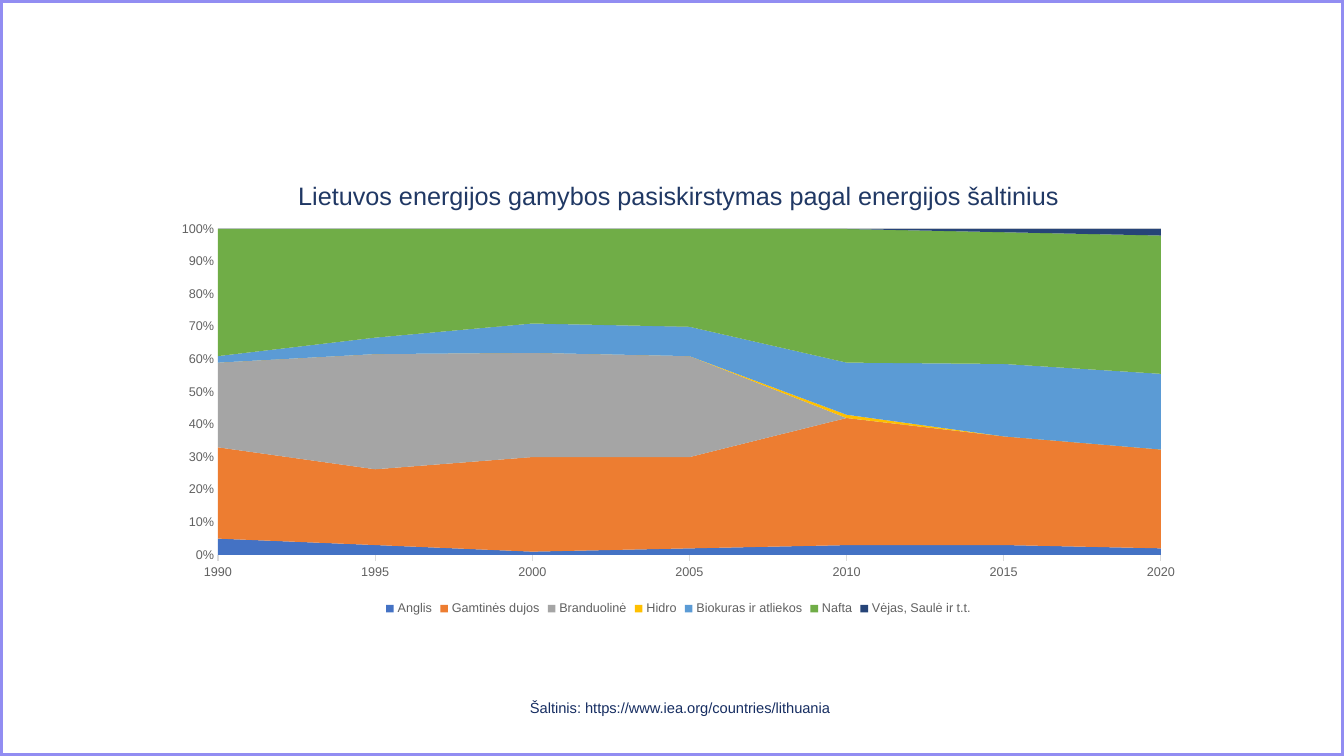
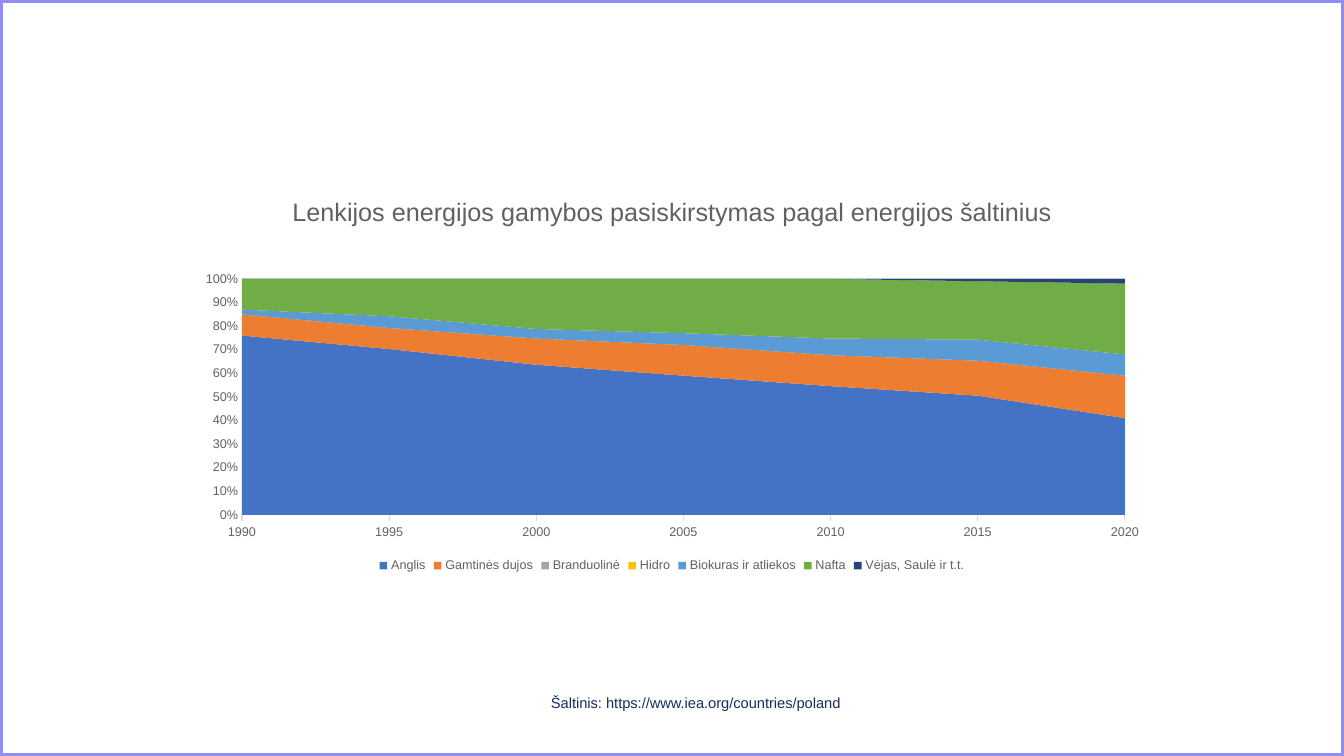
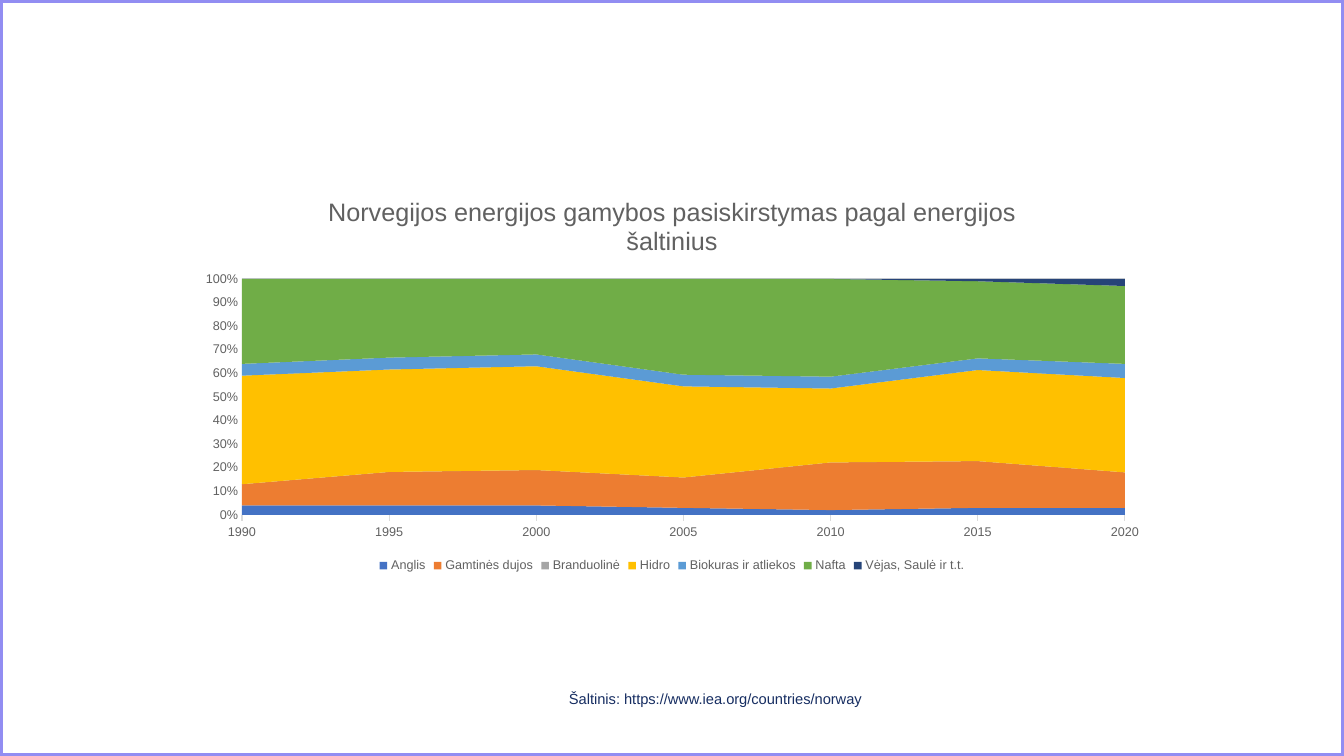
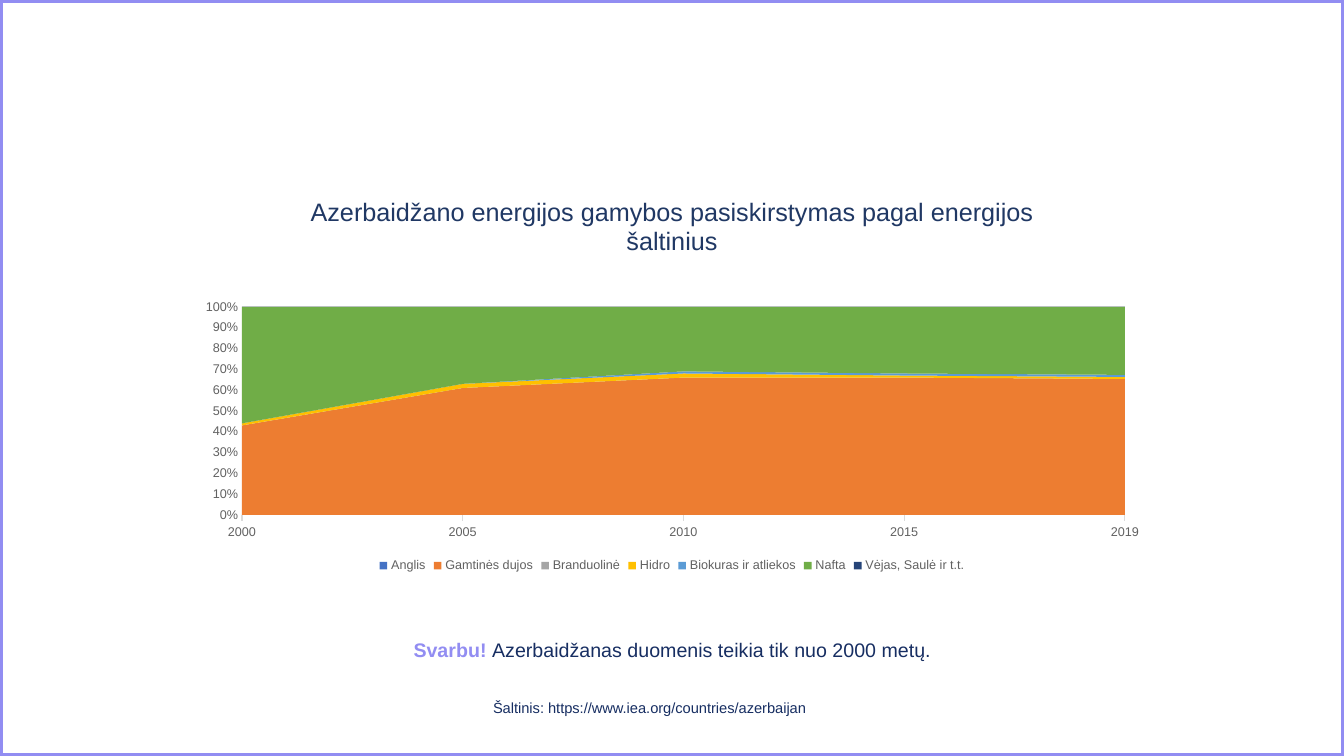
from lxml.etree import SubElement
from pptx import Presentation
from pptx.chart.data import CategoryChartData
from pptx.dml.color import RGBColor
from pptx.enum.chart import XL_CHART_TYPE, XL_LEGEND_POSITION, XL_TICK_MARK
from pptx.enum.shapes import MSO_SHAPE
from pptx.enum.text import MSO_AUTO_SIZE, PP_ALIGN
from pptx.oxml.ns import qn
from pptx.util import Emu, Pt

SLIDE_WIDTH, SLIDE_HEIGHT = 1344, 756
EMU_PER_PX = 12192000 / SLIDE_WIDTH
FONT = "Arial"

LAVENDER = RGBColor(0x92, 0x8D, 0xF2)
NAVY = RGBColor(0x17, 0x2E, 0x62)
TITLE_BLUE = RGBColor(0x20, 0x38, 0x64)
GREY = RGBColor(0x61, 0x61, 0x61)
LIGHT_GREY = RGBColor(0xDB, 0xDB, 0xDB)
NEAR_BLACK = RGBColor(0x0C, 0x0C, 0x0C)

ENERGY_SOURCES = {
    "Anglis": RGBColor(0x44, 0x72, 0xC4),
    "Gamtinės dujos": RGBColor(0xED, 0x7D, 0x31),
    "Branduolinė": RGBColor(0xA5, 0xA5, 0xA5),
    "Hidro": RGBColor(0xFF, 0xC0, 0x00),
    "Biokuras ir atliekos": RGBColor(0x5B, 0x9B, 0xD5),
    "Nafta": RGBColor(0x70, 0xAD, 0x47),
    "Vėjas, Saulė ir t.t.": RGBColor(0x26, 0x44, 0x78),
}

YEARS = ["1990", "1995", "2000", "2005", "2010", "2015", "2020"]
LARGE_CHART = (161, 160, 1035, 460)
CHART = (186, 178, 972, 399)

COUNTRIES = [
    {
        "name": "Lietuvos",
        "title_color": TITLE_BLUE,
        "years": YEARS,
        "chart": LARGE_CHART,
        "plot": (218, 229, 943, 326),
        "address": "lithuania",
        "source": (520, 686, 331, 38),
        "values": [
            [5, 3, 1, 2, 3, 3, 2],
            [28, 23, 29, 28, 39, 33, 30],
            [26, 35, 32, 31, None, None, None],
            [0, 0, 0, 0, 1, 0, 0],
            [2, 5, 9, 9, 16, 22, 23],
            [39, 33, 29, 30, 41, 40, 42],
            [None, None, None, 0, 0, 1, 2],
        ],
    },
    {
        "name": "Lenkijos",
        "title_color": GREY,
        "years": YEARS,
        "chart": CHART,
        "plot": (242, 279, 883, 236),
        "address": "poland",
        "source": (541, 681, 331, 38),
        "values": [
            [76, 71, 63, 59, 54, 51, 41],
            [9, 9, 11, 13, 13, 15, 18],
            [0] * 7,
            [0] * 7,
            [2, 5, 4, 5, 7, 9, 9],
            [13, 16, 21, 23, 25, 25, 30],
            [None, 0, 0, 0, 0, 1, 2],
        ],
    },
    {
        "name": "Norvegijos",
        "title_color": GREY,
        "years": YEARS,
        "chart": CHART,
        "plot": (242, 279, 883, 236),
        "address": "norway",
        "source": (559, 677, 331, 38),
        "values": [
            [4, 4, 4, 3, 2, 3, 3],
            [9, 14, 15, 13, 20, 20, 15],
            [None] * 7,
            [46, 43, 44, 39, 31, 39, 40],
            [5, 5, 5, 5, 5, 5, 6],
            [36, 33, 32, 41, 41, 33, 33],
            [None, 0, 0, 0, 0, 1, 3],
        ],
    },
    {
        "name": "Azerbaidžano",
        "title_color": TITLE_BLUE,
        "years": ["2000", "2005", "2010", "2015", "2019"],
        "chart": CHART,
        "plot": (242, 307, 883, 208),
        "address": "azerbaijan",
        "source": (483, 686, 490, 38),
        "note": ("Svarbu! ", "Azerbaidžanas duomenis teikia tik nuo 2000 metų."),
        "values": [
            [None] * 5,
            [43, 61, 66, 66, 66],
            [None] * 5,
            [1, 2, 2, 1, 1],
            [0, 0, 1, 1, 1],
            [56, 37, 31, 32, 33],
            [None, None, 0, 0, 0],
        ],
    },
]


def px(length):
    return Emu(round(length * EMU_PER_PX))


def style_font(font, size, color, bold=False):
    font.name = FONT
    font.size = Pt(size)
    font.bold = bold
    font.color.rgb = color


class Deck:
    def __init__(self):
        self.presentation = Presentation()
        self.presentation.slide_width = px(SLIDE_WIDTH)
        self.presentation.slide_height = px(SLIDE_HEIGHT)
        self.slide = None

    def new_slide(self):
        self.slide = self.presentation.slides.add_slide(self.presentation.slide_layouts[6])
        frame = self.slide.shapes.add_shape(
            MSO_SHAPE.RECTANGLE, 0, 0, px(SLIDE_WIDTH), px(SLIDE_HEIGHT)
        )
        frame.shadow.inherit = False
        frame.fill.background()
        frame.line.color.rgb = LAVENDER
        frame.line.width = Pt(4)

    def text(self, box, runs, size, margin, alignment=PP_ALIGN.LEFT, line_spacing=1.0):
        shape = self.slide.shapes.add_textbox(*map(px, box))
        text_frame = shape.text_frame
        text_frame.word_wrap = True
        text_frame.auto_size = MSO_AUTO_SIZE.SHAPE_TO_FIT_TEXT
        text_frame.margin_left = text_frame.margin_right = px(10)
        text_frame.margin_top = text_frame.margin_bottom = px(margin)
        paragraph = text_frame.paragraphs[0]
        paragraph.alignment = alignment
        paragraph.line_spacing = line_spacing
        for content, color, bold in runs:
            run = paragraph.add_run()
            run.text = content
            style_font(run.font, size, color, bold)

    def source(self, box, address):
        content = f"Šaltinis: https://www.iea.org/countries/{address}"
        self.text(box, [(content, NAVY, False)], 10.5, 10, line_spacing=1.15)

    def note(self, label, content):
        runs = [(label, LAVENDER, True), (content, NAVY, False)]
        self.text((262, 633, 821, 34), runs, 14, 5, PP_ALIGN.CENTER)

    def area_chart(self, box, plot, title, title_color, years, values):
        data = CategoryChartData()
        data.categories = years
        for name, series_values in zip(ENERGY_SOURCES, values):
            data.add_series(name, series_values)
        chart = self.slide.shapes.add_chart(
            XL_CHART_TYPE.AREA_STACKED_100, *map(px, box), data
        ).chart
        style_font(chart.font, 10, NEAR_BLACK)
        for series, color in zip(chart.plots[0].series, ENERGY_SOURCES.values()):
            series.format.fill.solid()
            series.format.fill.fore_color.rgb = color
            series.format.line.fill.background()
        self.chart_title(chart, title, title_color)
        self.axes(chart)
        chart.has_legend = True
        chart.legend.position = XL_LEGEND_POSITION.BOTTOM
        chart.legend.include_in_layout = False
        style_font(chart.legend.font, 9, GREY)
        self.place_plot(chart, box, plot)

    def chart_title(self, chart, title, color):
        chart.has_title = True
        run = chart.chart_title.text_frame.paragraphs[0].add_run()
        run.text = title
        style_font(run.font, 18, color)

    def axes(self, chart):
        category_axis, value_axis = chart.category_axis, chart.value_axis
        for axis in (category_axis, value_axis):
            style_font(axis.tick_labels.font, 9, GREY)
            axis.minor_tick_mark = XL_TICK_MARK.NONE
        category_axis.major_tick_mark = XL_TICK_MARK.OUTSIDE
        value_axis.major_tick_mark = XL_TICK_MARK.NONE
        value_axis.format.line.fill.background()
        value_axis.major_unit = 0.1
        value_axis.tick_labels.number_format = "0%"
        value_axis.tick_labels.number_format_is_linked = False
        value_axis.has_major_gridlines = True
        for line in (category_axis.format.line, value_axis.major_gridlines.format.line):
            line.color.rgb = LIGHT_GREY
            line.width = Pt(0.75)

    def place_plot(self, chart, box, plot):
        left, top, width, height = box
        plot_left, plot_top, plot_width, plot_height = plot
        chart_space = chart.element
        plot_area = chart_space.find(".//" + qn("c:plotArea"))
        for layout in plot_area.findall(qn("c:layout")):
            plot_area.remove(layout)
        layout = SubElement(plot_area, qn("c:layout"))
        plot_area.insert(0, layout)
        manual = SubElement(layout, qn("c:manualLayout"))
        settings = {
            "layoutTarget": "inner",
            "xMode": "edge",
            "yMode": "edge",
            "x": (plot_left - left) / width,
            "y": (plot_top - top) / height,
            "w": plot_width / width,
            "h": plot_height / height,
        }
        for name, value in settings.items():
            SubElement(manual, qn(f"c:{name}")).set("val", str(value))
        for blanks in chart_space.iter(qn("c:dispBlanksAs")):
            blanks.set("val", "zero")


def main():
    deck = Deck()
    for country in COUNTRIES:
        deck.new_slide()
        deck.area_chart(
            country["chart"],
            country["plot"],
            f"{country['name']} energijos gamybos pasiskirstymas pagal energijos šaltinius",
            country["title_color"],
            country["years"],
            country["values"],
        )
        if "note" in country:
            deck.note(*country["note"])
        deck.source(country["source"], country["address"])
    deck.presentation.save("out.pptx")


if __name__ == "__main__":
    main()
